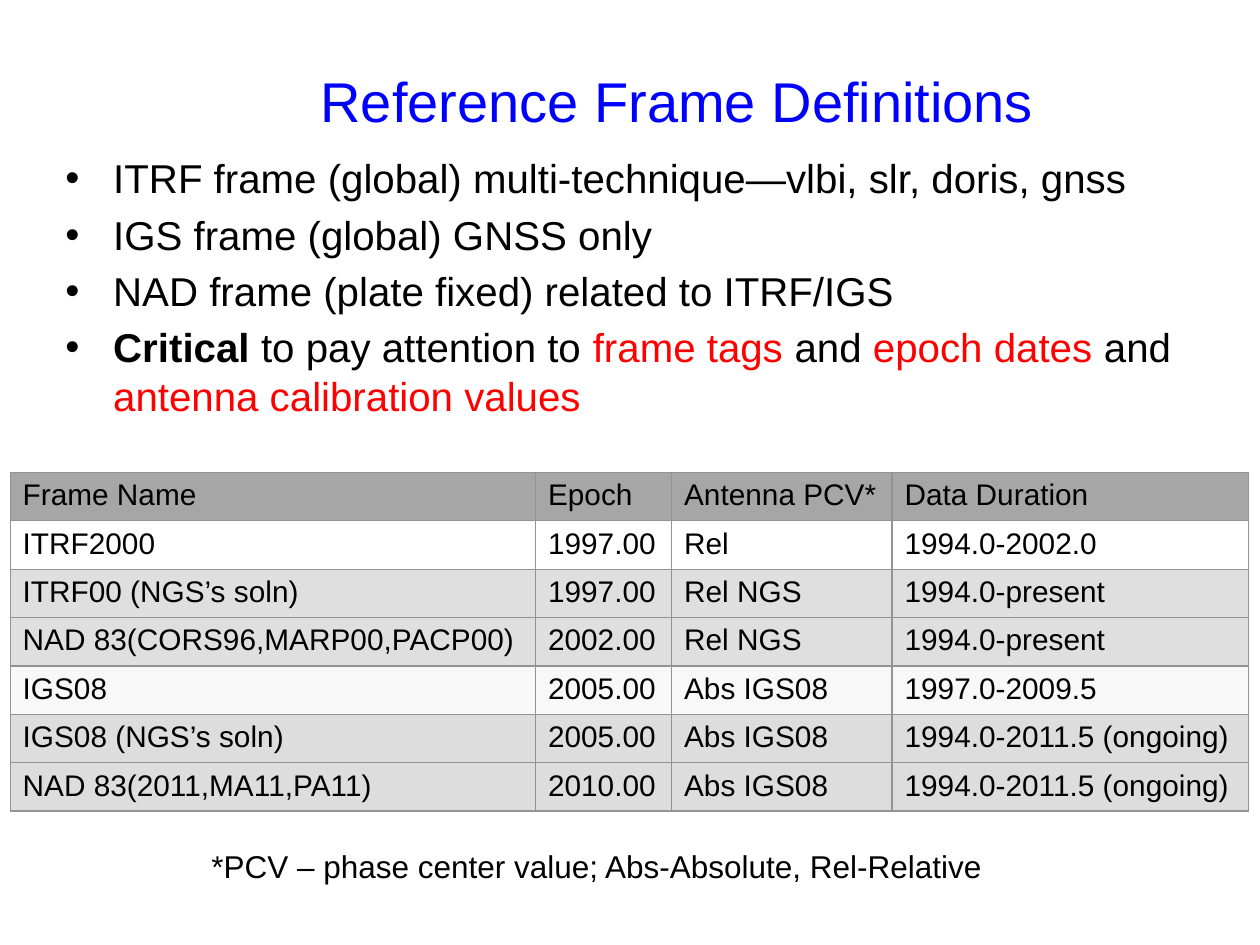
"""Build the slide on reference frame definitions."""
from dataclasses import dataclass

from lxml import etree
from pptx import Presentation
from pptx import util as u
from pptx.dml.color import RGBColor
from pptx.enum import text
from pptx.oxml.ns import qn


@dataclass(frozen=True)
class Theme:
    font: str = "Arial"
    ink: str = "000000"
    title: str = "0000FF"
    accent: str = "FF0000"
    border: str = "939393"
    header: str = "A6A6A6"
    plain: str = "FFFFFF"
    shaded: str = "DFDFDF"
    pale: str = "F8F8F8"
    grey: str = "DDDDDD"
    title_size: int = 32
    body_size: int = 23
    table_size: int = 17
    note_size: int = 18


class SlideBuilder:
    def __init__(self, page, theme):
        self.page = page
        self.theme = theme

    def style(self, para, size, color):
        para.font.name = self.theme.font
        para.font.size = u.Pt(size)
        para.font.color.rgb = RGBColor.from_string(color)

    def frame(self, left, top, width, height):
        box = self.page.shapes.add_textbox(*map(u.Inches, (left, top, width, height)))
        box.text_frame.word_wrap = True
        return box.text_frame

    def title(self, words, *place):
        frame = self.frame(*place)
        frame.vertical_anchor = text.MSO_ANCHOR.MIDDLE
        para = frame.paragraphs[0]
        para.text = words
        para.alignment = text.PP_ALIGN.CENTER
        self.style(para, self.theme.title_size, self.theme.title)

    def bullets(self, items, *place):
        frame = self.frame(*place)
        for index, spans in enumerate(items):
            para = frame.add_paragraph() if index else frame.paragraphs[0]
            if index:
                para.space_before = u.Pt(4.6)
            props = para._p.get_or_add_pPr()
            props.set("marL", str(u.Inches(0.38)))
            props.set("indent", str(u.Inches(-0.38)))
            etree.SubElement(props, qn("a:buFont"), typeface=self.theme.font)
            etree.SubElement(props, qn("a:buChar"), char="•")
            self.style(para, self.theme.body_size, self.theme.ink)
            for words, look in spans:
                span = para.add_run()
                span.text = words
                if look == "bold":
                    span.font.bold = True
                elif look == "accent":
                    span.font.color.rgb = RGBColor.from_string(self.theme.accent)

    def border(self, cell):
        props = cell._tc.get_or_add_tcPr()
        for index, side in enumerate(("lnL", "lnR", "lnT", "lnB")):
            line = etree.Element(qn(f"a:{side}"), w=str(u.Pt(0.75)))
            fill = etree.SubElement(line, qn("a:solidFill"))
            etree.SubElement(fill, qn("a:srgbClr"), val=self.theme.border)
            props.insert(index, line)

    def table(self, rows, fills, widths, left, top, row_height):
        place = map(u.Inches, (left, top, sum(widths), row_height * len(rows)))
        table = self.page.shapes.add_table(len(rows), len(widths), *place).table
        table.first_row = table.horz_banding = False
        for column, width in zip(table.columns, widths):
            column.width = u.Inches(width)
        for row, values, fill in zip(table.rows, rows, fills):
            row.height = u.Inches(row_height)
            for cell, value in zip(row.cells, values):
                cell.text = value
                cell.fill.solid()
                cell.fill.fore_color.rgb = RGBColor.from_string(fill)
                self.border(cell)
                self.style(cell.text_frame.paragraphs[0], self.theme.table_size, self.theme.ink)

    def note(self, words, *place):
        frame = self.frame(*place)
        frame.word_wrap = False
        frame.auto_size = text.MSO_AUTO_SIZE.SHAPE_TO_FIT_TEXT
        para = frame.paragraphs[0]
        para.text = words
        self.style(para, self.theme.note_size, self.theme.ink)


BULLETS = [
    [("ITRF frame (global) multi-technique—vlbi, slr, doris, gnss", "")],
    [("IGS frame (global) GNSS only", "")],
    [("NAD frame (plate fixed) related to ITRF/IGS", "")],
    [
        ("Critical ", "bold"),
        ("to pay attention to ", ""),
        ("frame tags ", "accent"),
        ("and", ""),
        (" epoch dates ", "accent"),
        ("and", ""),
        (" antenna calibration values", "accent"),
    ],
]

FRAMES = [
    ("Frame Name", "Epoch", "Antenna PCV*", "Data Duration"),
    ("ITRF2000", "1997.00", "Rel", "1994.0-2002.0"),
    ("ITRF00 (NGS’s soln)", "1997.00", "Rel NGS", "1994.0-present"),
    ("NAD 83(CORS96,MARP00,PACP00)", "2002.00", "Rel NGS", "1994.0-present"),
    ("IGS08", "2005.00", "Abs IGS08", "1997.0-2009.5"),
    ("IGS08 (NGS’s soln)", "2005.00", "Abs IGS08", "1994.0-2011.5 (ongoing)"),
    ("NAD 83(2011,MA11,PA11)", "2010.00", "Abs IGS08", "1994.0-2011.5 (ongoing)"),
]


def main():
    deck = Presentation()
    deck.slide_width, deck.slide_height = u.Inches(10), u.Inches(7.5)
    theme = Theme()
    builder = SlideBuilder(deck.slides.add_slide(deck.slide_layouts[6]), theme)
    builder.title("Reference Frame Definitions", 0.75, 0.17, 9.25, 1.25)
    builder.bullets(BULLETS, 0.42, 1.17, 9.25, 2.25)
    fills = [theme.header, theme.plain, theme.shaded, theme.shaded,
             theme.pale, theme.grey, theme.grey]
    builder.table(FRAMES, fills, (4.17, 1.08, 1.75, 2.83), 0.08, 3.75, 0.36)
    builder.note("*PCV – phase center value; Abs-Absolute, Rel-Relative", 1.58, 6.67, 6.51, 0.4)
    deck.save("out.pptx")


if __name__ == "__main__":
    main()
